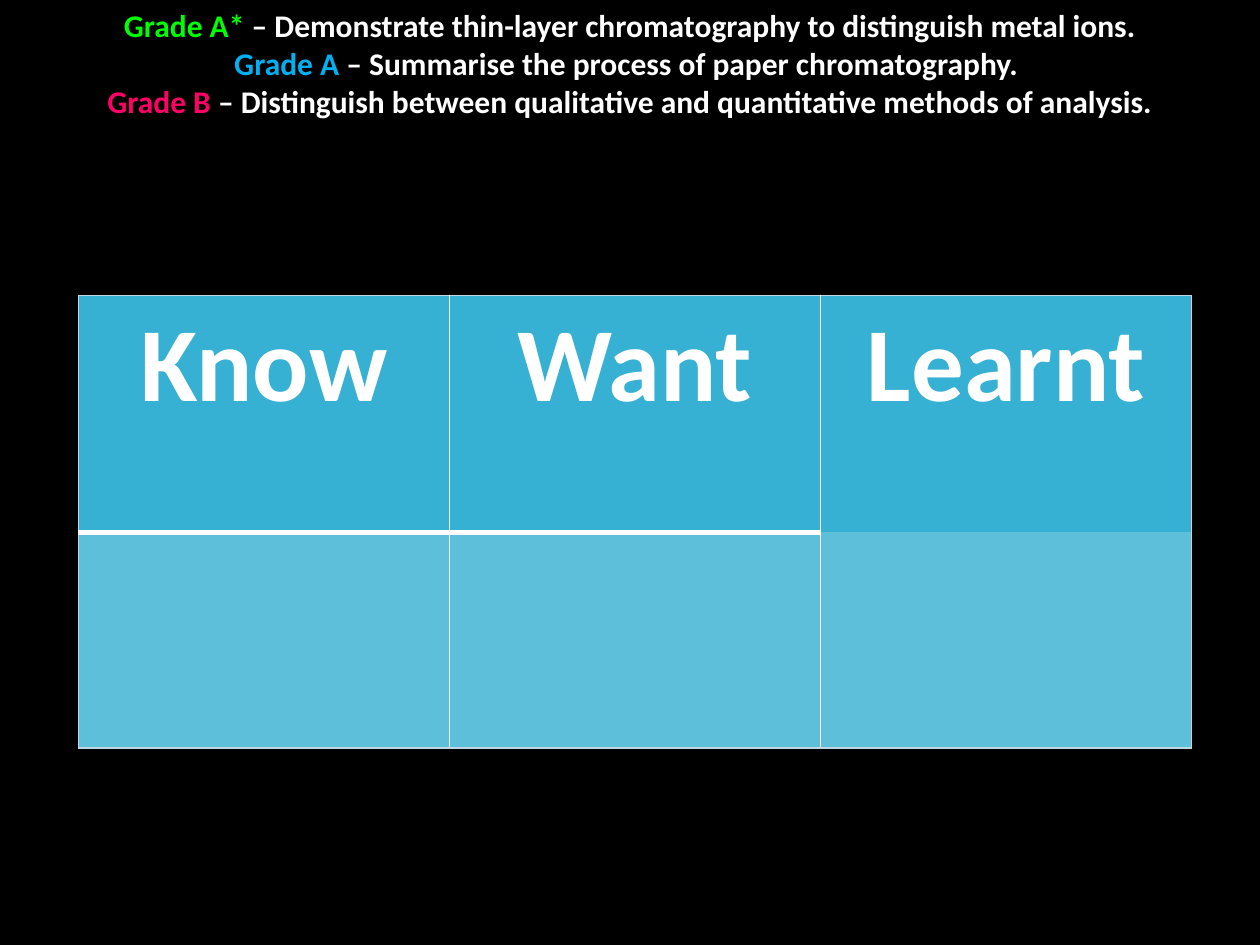
from dataclasses import dataclass

from lxml.etree import SubElement
from pptx import Presentation
from pptx.dml.color import RGBColor as Color
from pptx.enum.text import MSO_AUTO_SIZE as AutoSize, PP_ALIGN as Align
from pptx.oxml.ns import qn
from pptx.util import Cm, Pt


@dataclass(frozen=True)
class Theme:
    font: str = "Calibri"
    background: str = "000000"
    text: str = "FFFFFF"
    grade_a_star: str = "00FF00"
    grade_a: str = "00B0F0"
    grade_b: str = "FF0066"
    header_fill: str = "36B0D3"
    body_fill: str = "5EBFDB"
    outer_line: tuple = ("BCD7E1", 0.75)
    inner_line: tuple = ("FFFFFF", 1)
    header_line: tuple = ("FFFFFF", 3)
    goal_size: int = 18
    header_size: int = 60


THEME = Theme()


class SlideBuilder:
    def __init__(self, slide, theme):
        self.slide = slide
        self.theme = theme
        fill = slide.background.fill
        fill.solid()
        fill.fore_color.rgb = Color.from_string(theme.background)

    def style(self, para, size):
        para.alignment = Align.CENTER
        para.font.name = self.theme.font
        para.font.size = Pt(size)
        para.font.bold = True
        para.font.color.rgb = Color.from_string(self.theme.text)

    def goals(self, goals, left, top, width, height):
        """Centred lines, each opening with a coloured grade."""
        box = self.slide.shapes.add_textbox(Cm(left), Cm(top), Cm(width), Cm(height))
        frame = box.text_frame
        frame.word_wrap = True
        frame.auto_size = AutoSize.SHAPE_TO_FIT_TEXT
        for index, (grade, color, goal) in enumerate(goals):
            para = frame.add_paragraph() if index else frame.paragraphs[0]
            self.style(para, self.theme.goal_size)
            for text, text_color in ((grade, color), (goal, self.theme.text)):
                span = para.add_run()
                span.text = text
                span.font.color.rgb = Color.from_string(text_color)

    def border(self, cell, side, line):
        """Draw one cell edge, or hide it when line is None."""
        edge = SubElement(cell._tc.get_or_add_tcPr(), qn(f"a:ln{side}"))
        if line is None:
            SubElement(edge, qn("a:noFill"))
            return
        color, width = line
        edge.set("w", str(Pt(width)))
        SubElement(SubElement(edge, qn("a:solidFill")), qn("a:srgbClr"), val=color)

    def table(self, headings, left, top, column_width, row_heights):
        theme = self.theme
        count = len(headings)
        table = self.slide.shapes.add_table(
            len(row_heights), count, Cm(left), Cm(top),
            Cm(column_width * count), Cm(sum(row_heights))).table
        table.first_row = table.horz_banding = False
        for row, height in zip(table.rows, row_heights):
            row.height = Cm(height)
        for column in table.columns:
            column.width = Cm(column_width)

        verticals = [theme.outer_line, *[theme.inner_line] * (count - 1), theme.outer_line]
        fills = (theme.header_fill, theme.body_fill)
        for col, heading in enumerate(headings):
            # The rule under the header stops before the last column
            under_header = theme.header_line if col < count - 1 else None
            horizontals = (theme.outer_line, under_header, theme.outer_line)
            for row, fill_color in enumerate(fills):
                cell = table.cell(row, col)
                self.border(cell, "L", verticals[col])
                self.border(cell, "R", verticals[col + 1])
                self.border(cell, "T", horizontals[row])
                self.border(cell, "B", horizontals[row + 1])
                cell.fill.solid()
                cell.fill.fore_color.rgb = Color.from_string(fill_color)
            header = table.cell(0, col)
            header.text = heading
            self.style(header.text_frame.paragraphs[0], theme.header_size)


def main():
    deck = Presentation()
    deck.slide_width, deck.slide_height = Cm(25.4), Cm(19.05)
    page = SlideBuilder(deck.slides.add_slide(deck.slide_layouts[6]), THEME)

    # Learning goals
    page.goals([
        ("Grade A* ", THEME.grade_a_star,
         "– Demonstrate thin-layer chromatography to distinguish metal ions."),
        ("Grade A ", THEME.grade_a,
         "– Summarise the process of paper chromatography. "),
        ("Grade B ", THEME.grade_b,
         "– Distinguish between qualitative and quantitative methods of analysis."),
    ], left=0, top=0, width=25.4, height=2.57)

    # Know, want, learnt grid
    page.table(["Know", "Want", "Learnt"], left=1.58, top=5.95,
               column_width=7.48, row_heights=(4.78, 4.35))

    deck.save("out.pptx")


if __name__ == "__main__":
    main()
